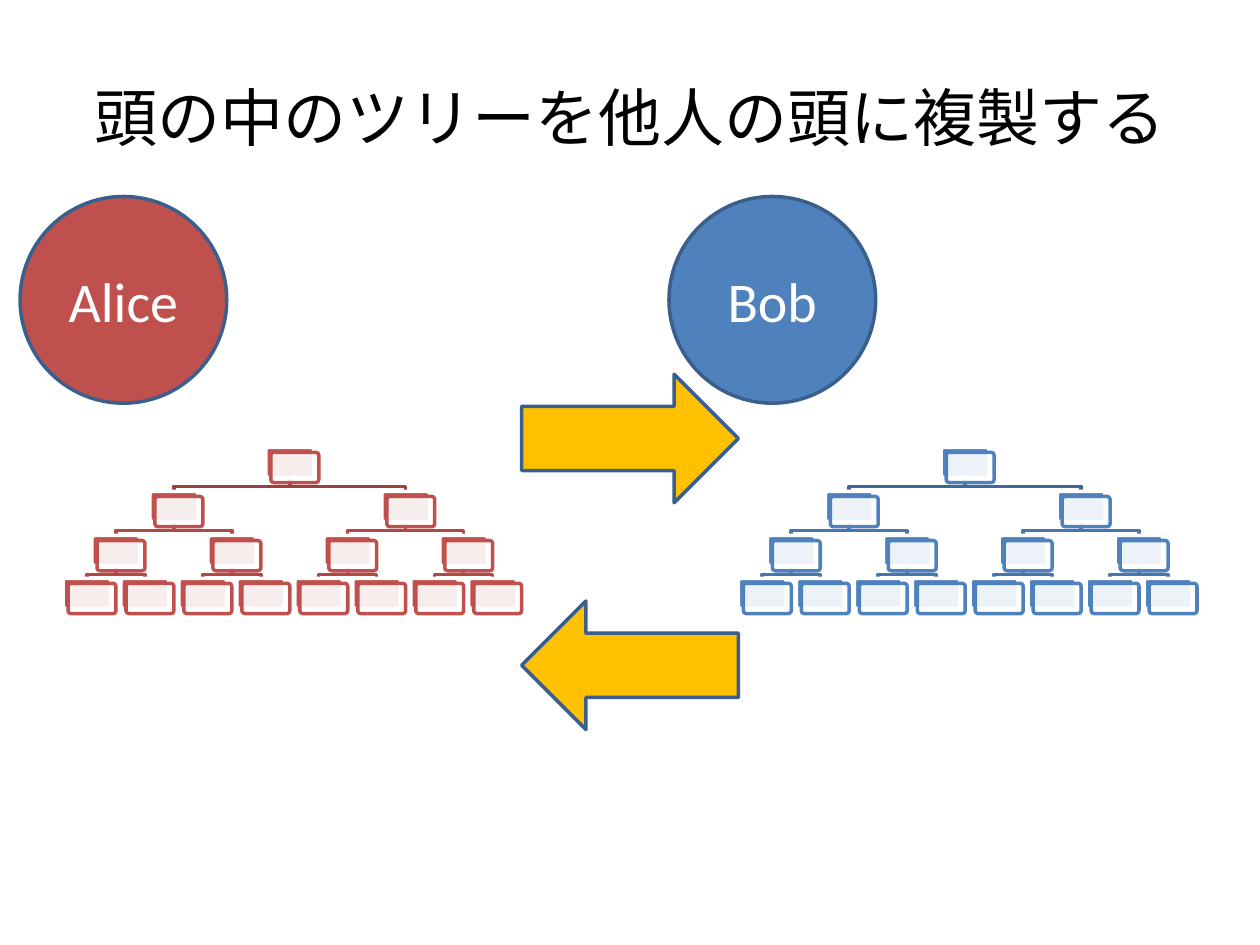
import pptx
from lxml import etree
from pptx.dml.color import RGBColor
from pptx.enum.shapes import MSO_SHAPE
from pptx.enum.text import MSO_ANCHOR, PP_ALIGN
from pptx.oxml.ns import qn
from pptx.util import Inches, Pt

BLACK = RGBColor(0x00, 0x00, 0x00)
WHITE = RGBColor(0xFF, 0xFF, 0xFF)
RED = RGBColor(0xC0, 0x50, 0x4D)
RED_DARK = RGBColor(0x9A, 0x40, 0x3E)
RED_MID = RGBColor(0xAE, 0x49, 0x46)
BLUE = RGBColor(0x4F, 0x81, 0xBD)
BLUE_DARK = RGBColor(0x3F, 0x67, 0x97)
BLUE_MID = RGBColor(0x48, 0x75, 0xAC)
AMBER = RGBColor(0xFF, 0xC0, 0x00)
OUTLINE = RGBColor(0x3A, 0x5F, 0x8C)

TITLE = "頭の中のツリーを他人の頭に複製する"
# name, circle left, centre of first leaf, main colour, branch colour by level
PEOPLE = [
    ("Alice", 0.16, 0.69, RED, (RED_DARK, RED_MID, RED_MID)),
    ("Bob", 5.31, 6.05, BLUE, (BLUE_DARK, BLUE_MID, BLUE_MID)),
]
ARROWS = [(4.77, 180), (2.97, 0)]  # top, rotation

LEVEL_TOPS = (3.55, 3.9, 4.25, 4.59)
LEAF_COUNT = 8
LEAF_STEP = 0.46
NODE_WIDTH, NODE_HEIGHT = 0.38, 0.24
FRONT_OFFSET = 0.04
BRANCH_DROP = 0.07


def format_text(frame, size, color):
    frame.vertical_anchor = MSO_ANCHOR.MIDDLE
    para = frame.paragraphs[0]
    para.alignment = PP_ALIGN.CENTER
    font = para.runs[0].font
    font.size, font.name = Pt(size), "Calibri"
    font.color.rgb = color


def add_shape(shapes, kind, box, fill, line):
    shape = shapes.add_shape(kind, *map(Inches, box))
    shape.shadow.inherit = False
    shape.fill.solid()
    shape.fill.fore_color.rgb = fill
    shape.line.color.rgb = line
    shape.line.width = Pt(2)
    return shape


def add_branch(shapes, parent_x, child_x, level, color):
    """Draw the elbow from a node's bottom edge to a child's top edge."""
    top = LEVEL_TOPS[level] + NODE_HEIGHT
    bend = top + BRANCH_DROP
    points = [(parent_x, top), (parent_x, bend), (child_x, bend),
              (child_x, LEVEL_TOPS[level + 1])]
    start, *rest = [(Inches(x), Inches(y)) for x, y in points]
    builder = shapes.build_freeform(*start)
    builder.add_line_segments(rest, close=False)
    branch = builder.convert_to_shape()
    branch.shadow.inherit = False
    branch.fill.background()
    branch.line.color.rgb = color
    branch.line.width = Pt(2)


def add_node(shapes, center, top, color):
    """Draw a solid card with a translucent white card in front of it."""
    left = center - NODE_WIDTH / 2
    for offset, fill, line in ((0, color, WHITE), (FRONT_OFFSET, WHITE, color)):
        box = (left + offset, top + offset, NODE_WIDTH, NODE_HEIGHT)
        card = add_shape(shapes, MSO_SHAPE.ROUNDED_RECTANGLE, box, fill, line)
        card.adjustments[0] = 0.1
    solid = card.fill._xPr.find(qn("a:solidFill"))
    etree.SubElement(solid[0], qn("a:alpha"), val="90000")


def add_tree(slide, first_leaf, color, branch_colors):
    shapes = slide.shapes.add_group_shape().shapes
    centers = []
    for level in range(len(LEVEL_TOPS)):
        span = LEAF_COUNT / 2 ** level
        centers.append([first_leaf + LEAF_STEP * ((i + 0.5) * span - 0.5)
                        for i in range(2 ** level)])
    for level, branch_color in enumerate(branch_colors):
        for i, child_x in enumerate(centers[level + 1]):
            add_branch(shapes, centers[level][i // 2], child_x, level, branch_color)
    for top, row in zip(LEVEL_TOPS, centers):
        for center in row:
            add_node(shapes, center, top, color)


def main():
    deck = pptx.Presentation()
    deck.slide_width, deck.slide_height = Inches(10), Inches(7.5)
    slide = deck.slides.add_slide(deck.slide_layouts[5])

    title = slide.shapes.title
    title.left, title.top, title.width, title.height = map(Inches, (0.5, 0.3, 9, 1.25))
    title.text_frame.text = TITLE
    format_text(title.text_frame, 36, BLACK)

    for name, left, first_leaf, color, branch_colors in PEOPLE:
        add_tree(slide, first_leaf, color, branch_colors)
        circle = add_shape(slide.shapes, MSO_SHAPE.OVAL, (left, 1.56, 1.64, 1.64),
                           color, OUTLINE)
        circle.text_frame.text = name
        format_text(circle.text_frame, 32, WHITE)

    for top, rotation in ARROWS:
        arrow = add_shape(slide.shapes, MSO_SHAPE.RIGHT_ARROW, (4.14, top, 1.72, 1.02),
                          AMBER, OUTLINE)
        arrow.rotation = rotation

    deck.save("out.pptx")


if __name__ == "__main__":
    main()
